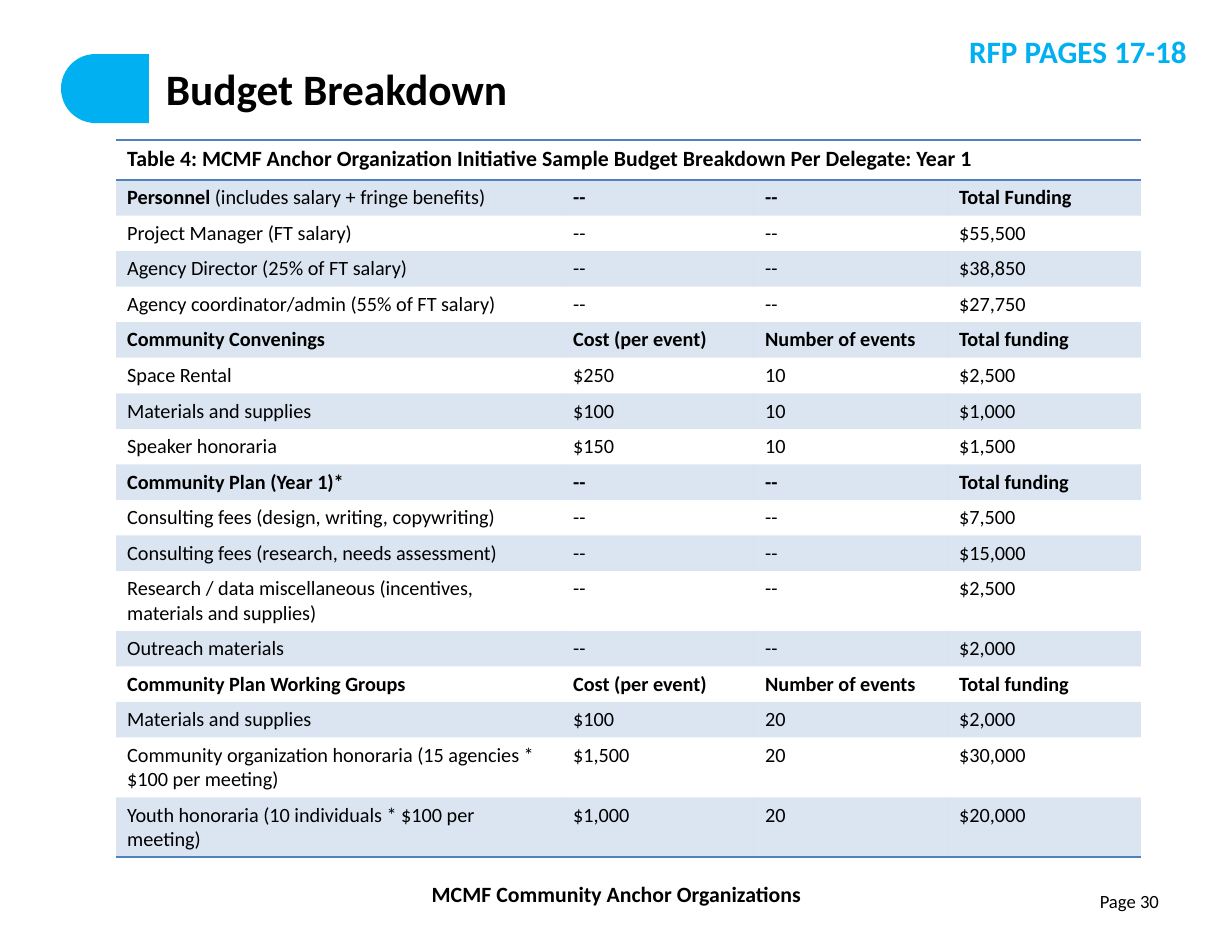
from lxml import etree
from pptx import Presentation
from pptx.dml.color import RGBColor
from pptx.enum.shapes import MSO_SHAPE
from pptx.enum.text import MSO_ANCHOR, MSO_AUTO_SIZE, PP_ALIGN
from pptx.oxml.ns import qn
from pptx.util import Pt

PX = 914400 // 112
LEFT, CENTER, RIGHT = PP_ALIGN.LEFT, PP_ALIGN.CENTER, PP_ALIGN.RIGHT
MIDDLE, NO_FIT = MSO_ANCHOR.MIDDLE, MSO_AUTO_SIZE.NONE
ROUND, RECT = MSO_SHAPE.ROUNDED_RECTANGLE, MSO_SHAPE.RECTANGLE

FONT = "Calibri"
BLACK = RGBColor(0x00, 0x00, 0x00)
WHITE = RGBColor(0xFF, 0xFF, 0xFF)
CYAN = RGBColor(0x00, 0xB0, 0xF0)
BLUE = RGBColor(0x4F, 0x81, 0xBD)
NO_STYLE = "{2D5ABB26-0587-4C30-8999-92F81FD0307C}"

COLUMNS = [446, 192, 194, 193]
CAPTION_H, LINE_H, TWO_LINE_H = 40, 35, 59
CAPTION = ("Table 4: MCMF Anchor Organization Initiative Sample Budget "
           "Breakdown Per Delegate: Year 1")
NOTE = "(includes salary + fringe benefits)"
BUDGET = [
    ("Personnel ", "--", "--", "Total Funding"),
    ("Project Manager (FT salary)", "--", "--", "$55,500"),
    ("Agency Director (25% of FT salary)", "--", "--", "$38,850"),
    ("Agency coordinator/admin (55% of FT salary)", "--", "--", "$27,750"),
    ("Community Convenings", "Cost (per event)", "Number of events", "Total funding"),
    ("Space Rental", "$250", "10", "$2,500"),
    ("Materials and supplies", "$100", "10", "$1,000"),
    ("Speaker honoraria", "$150", "10", "$1,500"),
    ("Community Plan (Year 1)*", "--", "--", "Total funding"),
    ("Consulting fees (design, writing, copywriting)", "--", "--", "$7,500"),
    ("Consulting fees (research, needs assessment)", "--", "--", "$15,000"),
    ("Research / data miscellaneous (incentives, materials and supplies)",
     "--", "--", "$2,500"),
    ("Outreach materials", "--", "--", "$2,000"),
    ("Community Plan Working Groups", "Cost (per event)", "Number of events",
     "Total funding"),
    ("Materials and supplies", "$100", "20", "$2,000"),
    ("Community organization honoraria (15 agencies * $100 per meeting)",
     "$1,500", "20", "$30,000"),
    ("Youth honoraria (10 individuals * $100 per meeting)", "$1,000", "20", "$20,000"),
]


def emu(*lengths):
    return [n * PX for n in lengths]


def style_run(r, size, bold=False, color=BLACK):
    r.font.name = FONT
    r.font.size = Pt(size)
    r.font.bold = bold
    r.font.color.rgb = color


def add_label(s, box, text, size, align=LEFT, bold=False, color=BLACK):
    tf = s.shapes.add_textbox(*emu(*box)).text_frame
    tf.word_wrap = True
    tf.text = text
    p = tf.paragraphs[0]
    p.alignment = align
    style_run(p.runs[0], size, bold, color)
    return tf


def set_insets(tf):
    tf.margin_left = tf.margin_right = 12 * PX
    tf.margin_top = tf.margin_bottom = 7 * PX


def add_bar(s, kind, box, color):
    sp = s.shapes.add_shape(kind, *emu(*box))
    sp.shadow.inherit = False
    sp.fill.solid()
    sp.fill.fore_color.rgb = color
    sp.line.fill.background()
    return sp


def add_header(s, box):
    """Rounded accent, white mask over its right part, and the title."""
    x, y, w, h = box
    accent = add_bar(s, ROUND, (x, y + 8, w - 5, 69), CYAN)
    accent.adjustments[0] = 0.5
    mask = add_bar(s, RECT, (x + 90, y, w - 90, h), WHITE)
    mask.line.color.rgb = WHITE
    mask.line.width = Pt(2)

    title = s.shapes.title
    title.left, title.top, title.width, title.height = emu(x + 93, y + 11, 1016, 62)
    s.shapes._spTree.append(title._element)  # bring the title above the mask
    tf = title.text_frame
    tf.text = "Budget Breakdown"
    tf.auto_size = NO_FIT
    tf.vertical_anchor = MIDDLE
    set_insets(tf)
    tf.paragraphs[0].alignment = LEFT
    style_run(tf.paragraphs[0].runs[0], 27.9, True)


def add_border(cell, sides):
    """Blue 1 pt rules; sides are listed in schema order (T before B)."""
    tcPr = cell._tc.get_or_add_tcPr()
    for i, side in enumerate(sides):
        ln = etree.Element(qn(f"a:ln{side}"), w=str(Pt(1)))
        fill = etree.SubElement(ln, qn("a:solidFill"))
        etree.SubElement(fill, qn("a:srgbClr"), val=str(BLUE))
        tcPr.insert(i, ln)


def fill_cell(cell, banded):
    if not banded:
        cell.fill.background()
        return
    cell.fill.solid()
    cell.fill.fore_color.rgb = BLUE
    clr = cell._tc.get_or_add_tcPr().find(".//" + qn("a:srgbClr"))
    etree.SubElement(clr, qn("a:alpha"), val="20000")


def write_cell(cell, text, size, bold):
    cell.text = text
    style_run(cell.text_frame.paragraphs[0].runs[0], size, bold)


def add_budget_table(s, x, y):
    heights = [CAPTION_H] + [TWO_LINE_H if len(row[0]) > 46 else LINE_H for row in BUDGET]
    frame = s.shapes.add_table(len(heights), len(COLUMNS),
                               *emu(x, y, sum(COLUMNS), sum(heights)))
    table = frame.table
    table.first_row = table.horz_banding = False
    table._tbl.tblPr.find(qn("a:tableStyleId")).text = NO_STYLE
    for column, w in zip(table.columns, COLUMNS):
        column.width = w * PX
    for row, h in zip(table.rows, heights):
        row.height = h * PX

    caption = table.cell(0, 0)
    caption.merge(table.cell(0, len(COLUMNS) - 1))
    write_cell(caption, CAPTION, 14, True)
    for cell in table.rows[0].cells:
        fill_cell(cell, False)
        add_border(cell, "TB")

    for i, values in enumerate(BUDGET, 1):
        section = values[-1].startswith("Total")
        for cell, text in zip(table.rows[i].cells, values):
            write_cell(cell, text, 13, section)
            fill_cell(cell, i % 2 == 1)
            if i == len(BUDGET):
                add_border(cell, "B")

    r = table.cell(1, 0).text_frame.paragraphs[0].add_run()
    r.text = NOTE
    style_run(r, 13)


def add_footer(s, x, y):
    add_label(s, (x, y, 637, 38), "MCMF Community Anchor Organizations", 14, CENTER, True)
    set_insets(add_label(s, (x + 585, y + 8, 288, 50), "Page 30", 12, RIGHT))


def main():
    prs = Presentation()
    prs.slide_width, prs.slide_height = emu(1232, 952)
    s = prs.slides.add_slide(prs.slide_layouts[5])
    add_header(s, (61, 46, 950, 96))
    add_footer(s, 298, 875)
    add_budget_table(s, 116, 140)
    add_label(s, (882, 27, 618, 49)[:1] + (27, 316, 49), "RFP PAGES 17-18", 20, RIGHT,
              True, CYAN)
    prs.save("out.pptx")


if __name__ == "__main__":
    main()
